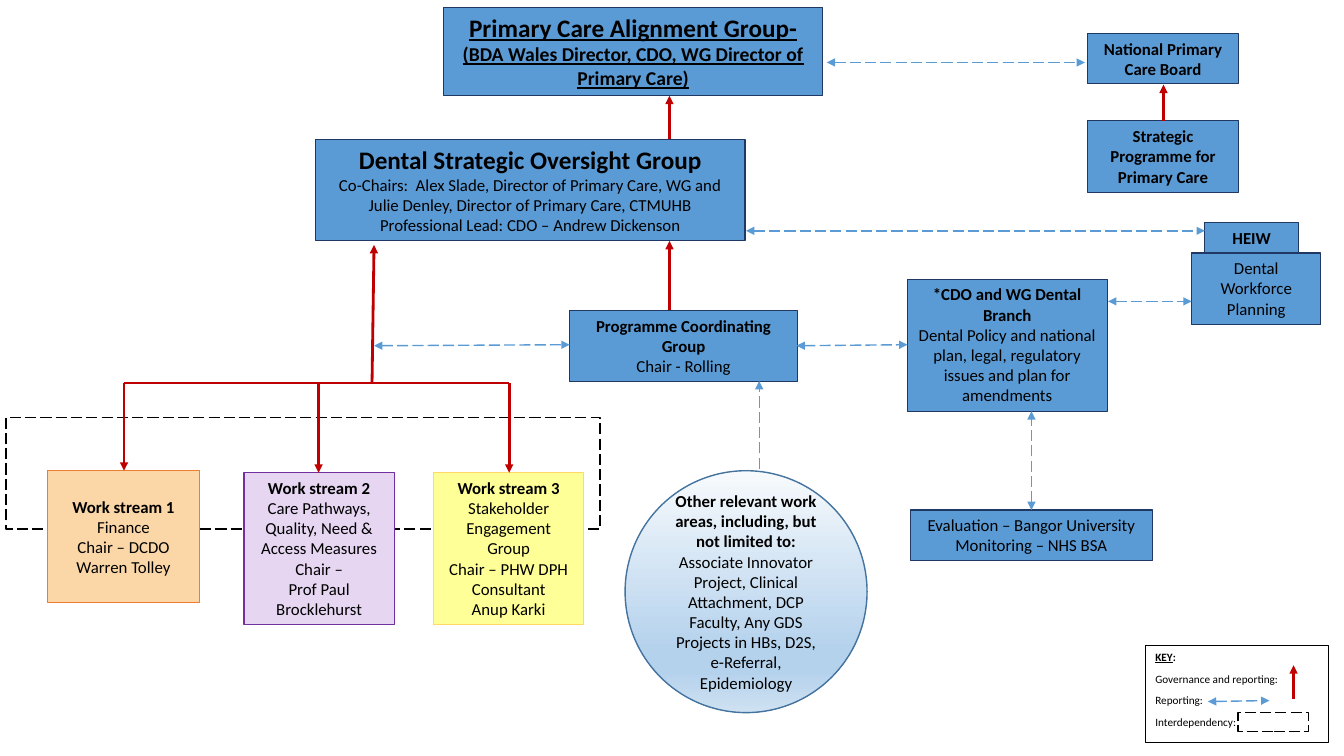
from dataclasses import dataclass
from typing import Optional

from lxml.etree import SubElement
from pptx import Presentation
from pptx.dml.color import RGBColor
from pptx.enum.dml import MSO_LINE_DASH_STYLE as Dash
from pptx.enum.shapes import MSO_CONNECTOR as Connector, MSO_SHAPE as Preset
from pptx.enum.text import MSO_ANCHOR as Anchor, MSO_AUTO_SIZE as AutoSize, PP_ALIGN as Align
from pptx.oxml.ns import qn
from pptx.util import Inches, Pt

FONT = "Calibri"
BLUE, NAVY, RED, BLACK = "5B9BD5", "203864", "C00000", "000000"


@dataclass(frozen=True)
class Span:
    text: str
    size: Optional[float] = None
    underline: Optional[bool] = None


@dataclass(frozen=True)
class Para:
    text: str = ""
    bold: bool = False
    size: float = 12
    spans: tuple[Span, ...] = ()


@dataclass(frozen=True)
class Box:
    left: float
    top: float
    width: float
    height: float
    paras: tuple[Para, ...] = ()
    fill: Optional[str] = BLUE
    line: str = NAVY
    weight: float = 0.75
    dashed: bool = False
    preset: Preset = Preset.RECTANGLE
    anchor: Anchor = Anchor.TOP
    align: Align = Align.CENTER
    gap: float = 0


@dataclass(frozen=True)
class Link:
    start: tuple[float, float]
    end: tuple[float, float]
    governance: bool = False
    head: bool = False
    tail: bool = True


def paint(target, color: str) -> None:
    """Give a fill or a line format one solid colour."""
    fill = getattr(target, "fill", target)
    fill.solid()
    fill.fore_color.rgb = RGBColor.from_string(color)


def write(frame, box: Box) -> None:
    frame.word_wrap = True
    frame.auto_size = AutoSize.NONE
    frame.vertical_anchor = box.anchor
    for i, para in enumerate(box.paras):
        paragraph = frame.add_paragraph() if i else frame.paragraphs[0]
        paragraph.alignment = box.align
        paragraph.space_before = Pt(box.gap if i else 0)
        font = paragraph.font
        font.name, font.size, font.bold = FONT, Pt(para.size), para.bold
        paint(font, BLACK)
        for span in para.spans or (Span(para.text),):
            run = paragraph.add_run()
            run.text = span.text
            run.font.underline = span.underline
            if span.size:
                run.font.size = Pt(span.size)


def style(shape, box: Box) -> None:
    if box.fill:
        paint(shape.fill, box.fill)
    else:
        shape.fill.background()
    paint(shape.line, box.line)
    shape.line.width = Pt(box.weight)
    if box.dashed:
        shape.line.dash_style = Dash.LONG_DASH
    write(shape.text_frame, box)


def draw_box(shapes, box: Box):
    shape = shapes.add_shape(box.preset, *map(Inches, (box.left, box.top, box.width, box.height)))
    shape.shadow.inherit = False
    style(shape, box)
    return shape


def draw_link(shapes, link: Link) -> None:
    connector = shapes.add_connector(Connector.STRAIGHT, *map(Inches, link.start + link.end))
    paint(connector.line, RED if link.governance else BLUE)
    connector.line.width = Pt(2 if link.governance else 1)
    if not link.governance:
        connector.line.dash_style = Dash.LONG_DASH
    properties = connector._element.spPr
    outline = properties.find(qn("a:ln"))
    for tag, wanted in (("a:headEnd", link.head), ("a:tailEnd", link.tail)):
        if wanted:
            SubElement(outline, qn(tag), type="triangle")
    SubElement(properties, qn("a:effectLst"))


def shade(shape, stops: tuple[tuple[int, str], ...]) -> None:
    """Fill a shape from top to bottom through the given percentage stops."""
    shape.fill.gradient()
    shape.fill.gradient_angle = 270
    stop_list = shape._element.spPr.find(qn("a:gradFill")).find(qn("a:gsLst"))
    for old in list(stop_list):
        stop_list.remove(old)
    for percent, color in stops:
        stop = SubElement(stop_list, qn("a:gs"), pos=str(percent * 1000))
        SubElement(stop, qn("a:srgbClr"), val=color)


ALIGNMENT_GROUP = Box(4.4, 0.07, 3.76, 0.88, (Para(bold=True, size=18, spans=(
    Span("Primary Care Alignment Group- ", 18, True),
    Span("(BDA Wales Director, CDO, WG Director of Primary Care)", 14, True))),))

GROUPS = (
    Box(9.03, 5.06, 2.4, 0.5, (Para("Evaluation – Bangor University"), Para("Monitoring – NHS BSA"))),
    Box(3.13, 1.38, 4.26, 1.01, (
        Para("Dental Strategic Oversight Group", True, 18),
        Para("Co-Chairs:  Alex Slade, Director of Primary Care, WG and "
             "Julie Denley, Director of Primary Care, CTMUHB"),
        Para("Professional Lead: CDO – Andrew Dickenson"))),
    Box(10.79, 0.33, 1.49, 0.5, (Para("National Primary Care Board", True),), anchor=Anchor.MIDDLE),
    Box(10.79, 1.2, 1.49, 0.71, (Para("Strategic Programme for Primary Care", True),)),
    Box(5.65, 3.08, 2.26, 0.71, (Para("Programme Coordinating Group", True), Para("Chair - Rolling"))),
    Box(9, 2.77, 1.98, 1.31, (
        Para("*CDO and WG Dental Branch", True),
        Para("Dental Policy and national plan, legal, regulatory issues and plan for amendments"))),
    Box(11.95, 2.21, 0.93, 0.3, (Para("HEIW", True),)),
    Box(11.82, 2.51, 1.28, 0.71, (Para("Dental Workforce Planning"),)),
)

INTERDEPENDENCY = Box(0.06, 4.14, 5.89, 1.11, fill=None, line=BLACK, weight=1, dashed=True)

WORK_STREAMS = (
    Box(0.47, 4.67, 1.51, 1.31, (
        Para("Work stream 1", True), Para("Finance"), Para("Chair – DCDO Warren Tolley")),
        "FBD7A7", "ED7D31", anchor=Anchor.MIDDLE),
    Box(2.42, 4.69, 1.49, 1.51, (
        Para("Work stream 2", True), Para("Care Pathways, Quality, Need & Access Measures"),
        Para("Chair –"), Para("Prof Paul Brocklehurst")), "E6D6F2", "7030A0"),
    Box(4.3, 4.69, 1.49, 1.51, (
        Para("Work stream 3", True), Para("Stakeholder Engagement Group"),
        Para("Chair – PHW DPH Consultant"), Para("Anup Karki")), "FFFF97", "FFD966"),
)

OTHER_AREAS = Box(6.2, 4.67, 2.4, 2.4, (
    Para("Other relevant work areas, including, but not limited to:", True),
    Para("Associate Innovator Project, Clinical Attachment, DCP Faculty, Any GDS Projects "
         "in HBs, D2S, e-Referral, Epidemiology")),
    line="43739E", weight=1, preset=Preset.OVAL, anchor=Anchor.MIDDLE)
OTHER_AREAS_STOPS = ((0, "F7FAFD"), (74, "B5D2EC"), (83, "B5D2EC"), (100, "CEE1F2"))

BRANCH_Y = 3.8
GOVERNANCE = (
    Link((1.23, BRANCH_Y), (5.05, BRANCH_Y), True, tail=False),
    Link((3.69, BRANCH_Y), (3.71, 2.43), True),
    Link((6.64, 1.38), (6.64, 0.95), True),
    Link((6.64, 3.08), (6.64, 2.39), True),
    Link((11.54, 1.2), (11.54, 0.84), True),
) + tuple(Link((x, BRANCH_Y), (x, stream.top), True)
          for x, stream in zip((1.23, 3.16, 5.05), WORK_STREAMS))

REPORTING = (
    Link((7.53, 4.65), (7.53, 3.78)),
    Link((8.2, 0.62), (10.76, 0.62), head=True),
    Link((10.23, 5.06), (10.23, 4.08), head=True),
    Link((3.71, 3.43), (5.65, 3.42), head=True),
    Link((7.4, 2.29), (11.95, 2.29), head=True),
    Link((10.99, 2.99), (11.82, 2.99), head=True),
    Link((7.9, 3.43), (9, 3.42), head=True),
)

KEY = Box(11.36, 6.4, 1.82, 0.97, (
    Para(bold=True, size=8, spans=(Span("KEY", underline=True), Span(":"))),
    Para("Governance and reporting:", size=8), Para("Reporting:", size=8),
    Para("Interdependency:", size=8)), None, BLACK, align=Align.LEFT, gap=6)
KEY_SAMPLE = Box(12.28, 7.07, 0.7, 0.19, fill=None, line=BLACK, weight=1, dashed=True)
KEY_LINKS = (Link((12.83, 6.93), (12.83, 6.6), True),
             Link((11.98, 6.96), (12.59, 6.95), head=True))


def main() -> None:
    deck = Presentation()
    deck.slide_width, deck.slide_height = Inches(13.33), Inches(7.5)
    slide = deck.slides.add_slide(deck.slide_layouts[5])
    shapes = slide.shapes

    # Top group, in the title placeholder
    title, place = shapes.title, ALIGNMENT_GROUP
    title.left, title.top = Inches(place.left), Inches(place.top)
    title.width, title.height = Inches(place.width), Inches(place.height)
    style(title, place)

    # Groups, work streams and other areas
    for box in (*GROUPS, INTERDEPENDENCY, *WORK_STREAMS):
        draw_box(shapes, box)
    shade(draw_box(shapes, OTHER_AREAS), OTHER_AREAS_STOPS)

    # Governance and reporting lines
    for link in GOVERNANCE + REPORTING:
        draw_link(shapes, link)

    # Key
    key = shapes.add_group_shape().shapes
    for box in (KEY, KEY_SAMPLE):
        draw_box(key, box)
    for link in KEY_LINKS:
        draw_link(key, link)

    deck.save("out.pptx")


if __name__ == "__main__":
    main()
